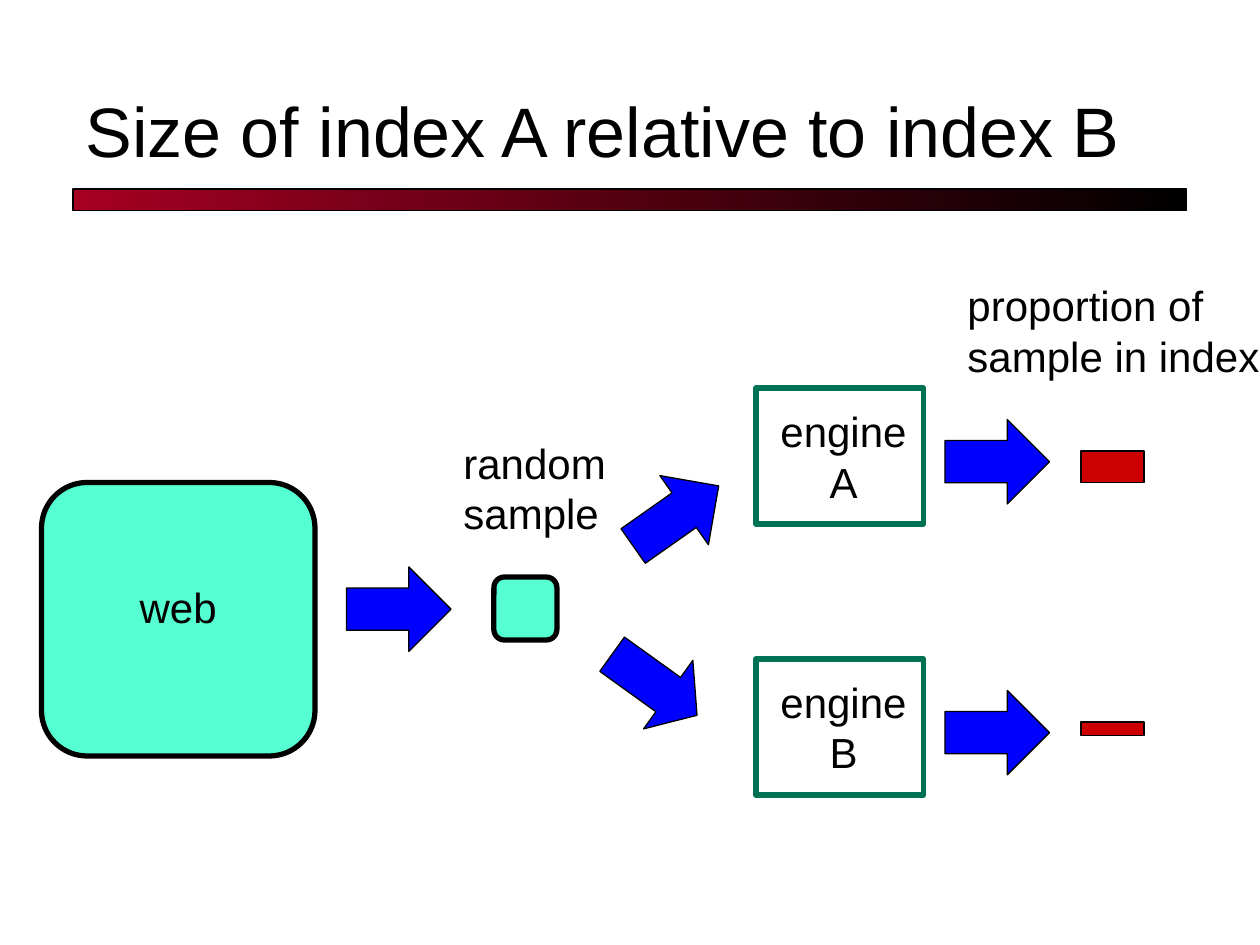
from pptx import Presentation
from pptx.dml.color import RGBColor
from pptx.enum.shapes import MSO_SHAPE as Preset
from pptx.enum.text import MSO_ANCHOR as Anchor, PP_ALIGN as Align
from pptx.util import Inches, Pt

COLORS = {
    "black": "000000",
    "crimson": "A50021",
    "mint": "56FFD2",
    "blue": "0000FF",
    "green": "007254",
    "red": "CC0000",
}

presentation = Presentation()
presentation.slide_width = Inches(10)
presentation.slide_height = Inches(7.5)
slide = presentation.slides.add_slide(presentation.slide_layouts[6])


def add_shape(preset, left, top, width, height, fill=None, line="black", weight=0.75):
    shape = slide.shapes.add_shape(
        preset, Inches(left), Inches(top), Inches(width), Inches(height))
    shape.shadow.inherit = False
    if fill:
        shape.fill.solid()
        shape.fill.fore_color.rgb = RGBColor.from_string(COLORS[fill])
    else:
        shape.fill.background()
    shape.line.color.rgb = RGBColor.from_string(COLORS[line])
    shape.line.width = Pt(weight)
    return shape


def add_text(lines, left, top, width, height, size=24, align=Align.LEFT, wrap=False):
    """Add a text box with one paragraph per line and return its text frame."""
    box = slide.shapes.add_textbox(
        Inches(left), Inches(top), Inches(width), Inches(height))
    frame = box.text_frame
    frame.word_wrap = wrap
    for index, line in enumerate(lines):
        paragraph = frame.paragraphs[0] if index == 0 else frame.add_paragraph()
        paragraph.alignment = align
        run = paragraph.add_run()
        run.text = line
        run.font.name = "Arial"
        run.font.size = Pt(size)
        run.font.color.rgb = RGBColor.from_string(COLORS["black"])
    return frame


# Title and the gradient bar below it
bar = add_shape(Preset.RECTANGLE, 0.58, 1.5, 8.84, 0.17)
bar.fill.gradient()
bar.fill.gradient_angle = 0
for stop, color in zip(bar.fill.gradient_stops, ("crimson", "black")):
    stop.color.rgb = RGBColor.from_string(COLORS[color])
title = add_text(["Size of index A relative to index B"],
                 0.58, 0.33, 8.83, 1.08, size=40, wrap=True)
title.vertical_anchor = Anchor.BOTTOM

# The web and the random sample drawn from it
add_shape(Preset.ROUNDED_RECTANGLE, 0.33, 3.83, 2.17, 2.17, "mint", weight=3)
add_text(["web"], 1.01, 4.57, 0.83, 0.5)
add_shape(Preset.ROUNDED_RECTANGLE, 3.92, 4.58, 0.5, 0.5, "mint", weight=3)
add_text(["random", "sample"], 3.58, 3.42, 1.34, 0.91)

# Arrows from the web to the sample and from the sample to each engine
for left, top, rotation, head in [
    (2.75, 4.5, 0, 0.5),
    (4.95, 3.76, 324.9, 0.5),
    (4.78, 5.1, 35.7, 0.42),
]:
    arrow = add_shape(Preset.RIGHT_ARROW, left, top, 0.83, 0.67, "blue")
    arrow.rotation = rotation
    arrow.adjustments[1] = head

# One row per engine: box, arrow and the share of the sample it holds
for name, top, share_height in [("A", 3.08, 0.25), ("B", 5.23, 0.11)]:
    add_shape(Preset.RECTANGLE, 6, top, 1.33, 1.08, line="green", weight=3)
    add_text(["engine", name], 6.08, top + 0.09, 1.23, 0.91, align=Align.CENTER)
    add_shape(Preset.RIGHT_ARROW, 7.5, top + 0.25, 0.83, 0.67, "blue")
    add_shape(Preset.RECTANGLE, 8.58, top + 0.5, 0.5, share_height, "red")
add_text(["proportion of", "sample in index"], 7.58, 2.17, 2.58, 0.91, wrap=True)

presentation.save("out.pptx")
